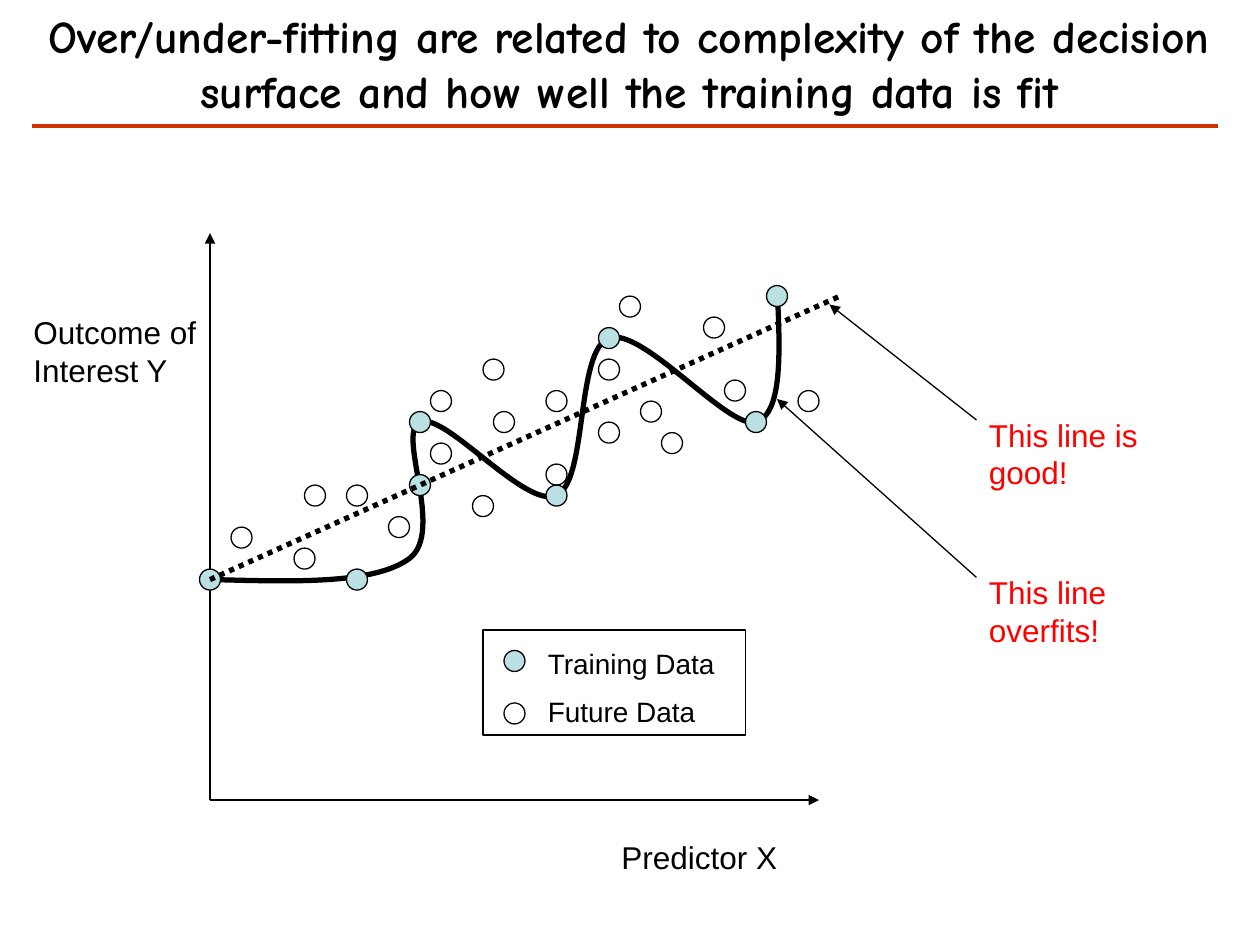
from lxml.etree import SubElement
from pptx import Presentation
from pptx.dml.color import RGBColor
from pptx.enum.dml import MSO_LINE
from pptx.enum.shapes import MSO_CONNECTOR, MSO_SHAPE
from pptx.enum.text import MSO_ANCHOR, MSO_AUTO_SIZE, PP_ALIGN
from pptx.oxml.ns import qn
from pptx.util import Inches, Pt

COLORS = {"ink": "000000", "training": "BBE0E3", "note": "FF0000", "rule": "CC3300"}

# Grid: twelve columns and rows to the inch, rows starting slightly below the top
CELL = 1 / 12
TOP = 0.1
DOT = 2  # dot diameter in cells

ORIGIN = (20, 54)
TRAINING = [ORIGIN, (34, 54), (40, 45), (40, 39), (53, 46), (58, 31), (72, 39), (74, 27)]
FUTURE = [(29, 52), (34, 46), (38, 49), (46, 47), (48, 39), (53, 44), (53, 37),
          (58, 40), (64, 41), (62, 38), (58, 34), (60, 28), (70, 36), (68, 30),
          (23, 50), (30, 46), (42, 42), (42, 37), (47, 34), (77, 37)]
# Each triple holds two control points and the end of one Bezier segment
OVERFIT = [(27.8, 54.2), (35.6, 54.5), (39, 52),
           (42.4, 49.4), (37.7, 40), (40, 39),
           (42.4, 38), (50, 47.3), (53, 46),
           (56, 44.6), (54.8, 32.2), (58, 31),
           (61.2, 29.9), (69.4, 39.8), (72, 39),
           (74.6, 38.2), (74.3, 32), (74, 26)]


def color(name):
    return RGBColor.from_string(COLORS[name])


def at(col, row):
    return Inches(col * CELL), Inches(TOP + row * CELL)


def size(cols, rows):
    return Inches(cols * CELL), Inches(rows * CELL)


def apply_format(target, values):
    for name, value in values.items():
        setattr(target, name, value)


def style_outline(shape, fill=None, width=0.75):
    shape.shadow.inherit = False
    if fill:
        shape.fill.solid()
        shape.fill.fore_color.rgb = color(fill)
    else:
        shape.fill.background()
    shape.line.color.rgb = color("ink")
    shape.line.width = Pt(width)


def add_dot(slide, center, fill=None):
    col, row = center
    dot = slide.shapes.add_shape(
        MSO_SHAPE.OVAL, *at(col - DOT / 2, row - DOT / 2), *size(DOT, DOT))
    style_outline(dot, fill)


def add_line(slide, start, end, width=0.75, ink="ink", dash=None, arrow=False):
    connector = slide.shapes.add_connector(MSO_CONNECTOR.STRAIGHT, *at(*start), *at(*end))
    connector.line.color.rgb = color(ink)
    apply_format(connector.line, {"width": Pt(width), "dash_style": dash})
    if arrow:
        SubElement(connector.line._get_or_add_ln(), qn("a:tailEnd"), type="triangle")
    SubElement(connector._element.spPr, qn("a:effectLst"))


def add_overfit_curve(slide):
    builder = slide.shapes.build_freeform(*at(*ORIGIN))
    builder.add_line_segments([at(*point) for point in OVERFIT], close=False)
    curve = builder.convert_to_shape()
    style_outline(curve, width=3)
    # Turn every three straight segments into one Bezier segment
    outline = next(curve._element.iter(qn("a:path")))
    segments = outline.findall(qn("a:lnTo"))
    for first in range(0, len(segments), 3):
        bezier = SubElement(outline, qn("a:cubicBezTo"))
        for segment in segments[first:first + 3]:
            bezier.append(segment[0])
            outline.remove(segment)


def add_label(slide, lines, place, extent, points=18, ink="ink"):
    frame = slide.shapes.add_textbox(*at(*place), *size(*extent)).text_frame
    frame.word_wrap = True
    frame.text = "\n".join(lines)
    for index, paragraph in enumerate(frame.paragraphs):
        apply_format(paragraph.font, {"name": "Arial", "size": Pt(points)})
        paragraph.font.color.rgb = color(ink)
        if index:
            paragraph.space_before = Pt(points / 2)


def set_title(slide, wording, slide_width):
    title = slide.shapes.title
    apply_format(title, {"left": 0, "top": 0, "width": slide_width, "height": Inches(1)})
    frame = title.text_frame
    frame.text = wording
    apply_format(frame, {"word_wrap": True, "auto_size": MSO_AUTO_SIZE.NONE,
                         "vertical_anchor": MSO_ANCHOR.MIDDLE})
    heading = frame.paragraphs[0]
    heading.alignment = PP_ALIGN.CENTER
    apply_format(heading.runs[0].font, {"name": "Comic Neue", "size": Pt(26), "bold": True})
    heading.runs[0].font.color.rgb = color("ink")


def add_legend(slide):
    add_dot(slide, (49, 61.75), "training")
    add_dot(slide, (49, 66.75))
    add_label(slide, ["Training Data", "Future Data"], (51, 59.8), (25, 9.2), points=16)
    frame = slide.shapes.add_shape(MSO_SHAPE.RECTANGLE, *at(46, 58.8), *size(25, 10))
    style_outline(frame)


def main():
    deck = Presentation()
    apply_format(deck, {"slide_width": Inches(10), "slide_height": Inches(7.5)})
    slide = deck.slides.add_slide(deck.slide_layouts[5])

    # Title and rule
    set_title(slide, "Over/under-fitting are related to complexity of the decision "
                     "surface and how well the training data is fit", deck.slide_width)
    add_line(slide, (3, 10.8), (116, 10.8), width=2.5, ink="rule")

    # Overfitting curve and axes
    add_overfit_curve(slide)
    corner = (20, 75)
    for axis_end in [(20, 21), (78, 75)]:
        add_line(slide, corner, axis_end, arrow=True)
    add_label(slide, ["Predictor X"], (58, 78), (19, 4.8))
    add_label(slide, ["Outcome of Interest Y"], (2, 28), (19, 8.4))

    # Data points and the well-fitting line
    for center in TRAINING:
        add_dot(slide, center, "training")
    add_line(slide, ORIGIN, (80, 27), width=3, dash=MSO_LINE.ROUND_DOT)
    for center in FUTURE:
        add_dot(slide, center)

    add_legend(slide)

    # Notes with arrows to the two lines
    for wording, row, target in [("This line is good!", 37.8, (79, 27.8)),
                                 ("This line overfits!", 52.8, (74, 36.8))]:
        add_label(slide, [wording], (93, row), (22, 8.4), ink="note")
        add_line(slide, (93, row + 1), target, arrow=True)

    deck.save("out.pptx")


if __name__ == "__main__":
    main()
